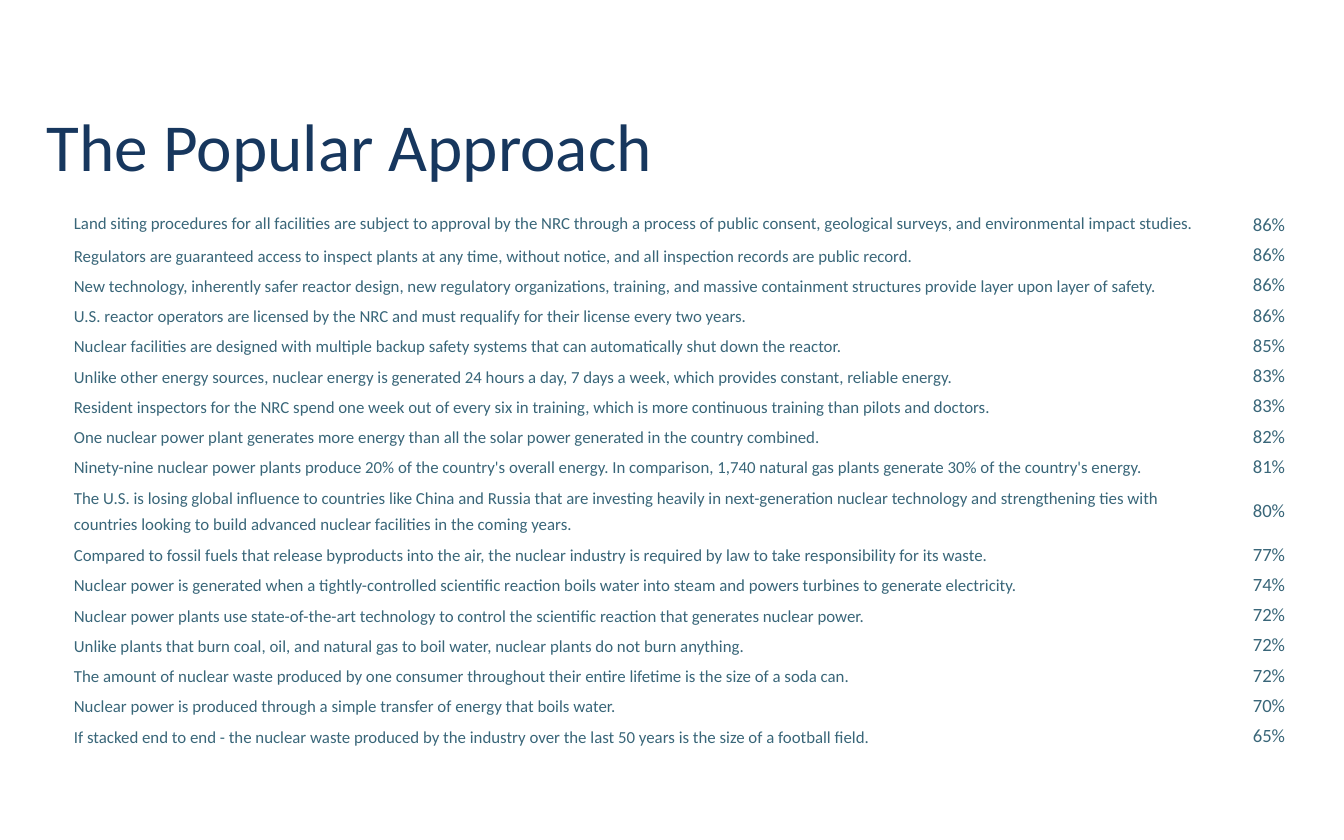
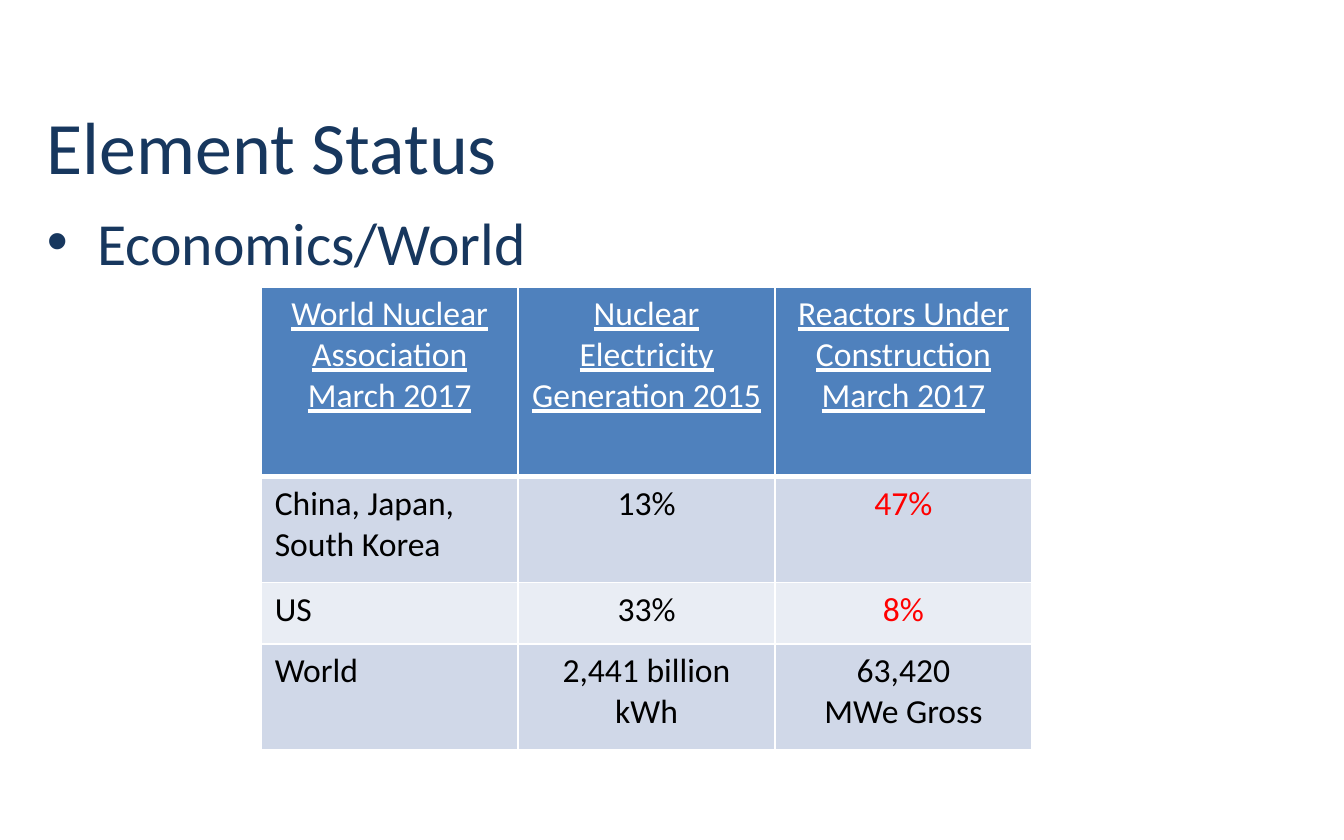
from lxml import etree
from pptx import Presentation
from pptx import util as u
from pptx.dml.color import RGBColor
from pptx.enum import text as t
from pptx.oxml import ns

Pt = u.Pt
FONT = "Calibri"
NAVY = RGBColor(0x17, 0x37, 0x5E)
TEAL = RGBColor(0x39, 0x66, 0x79)
BLUE = RGBColor(0x4F, 0x81, 0xBD)
PALE = RGBColor(0xD0, 0xD8, 0xE8)
MIST = RGBColor(0xE9, 0xED, 0xF4)
WHITE = RGBColor(0xFF, 0xFF, 0xFF)
BLACK = RGBColor(0, 0, 0)
RED = RGBColor(0xFF, 0, 0)
LEFT, MID = t.PP_ALIGN.LEFT, t.PP_ALIGN.CENTER

CLAIMS = [
    ("Land siting procedures for all facilities are subject to approval by the NRC through a process of "
     "public consent, geological surveys, and environmental impact studies.", 86),
    ("Regulators are guaranteed access to inspect plants at any time, without notice, and all inspection "
     "records are public record.", 86),
    ("New technology, inherently safer reactor design, new regulatory organizations, training, and massive "
     "containment structures provide layer upon layer of safety.", 86),
    ("U.S. reactor operators are licensed by the NRC and must requalify for their license every two years.", 86),
    ("Nuclear facilities are designed with multiple backup safety systems that can automatically shut down "
     "the reactor.", 85),
    ("Unlike other energy sources, nuclear energy is generated 24 hours a day, 7 days a week, which provides "
     "constant, reliable energy.", 83),
    ("Resident inspectors for the NRC spend one week out of every six in training, which is more continuous "
     "training than pilots and doctors.", 83),
    ("One nuclear power plant generates more energy than all the solar power generated in the country "
     "combined.", 82),
    ("Ninety-nine nuclear power plants produce 20% of the country's overall energy. In comparison, 1,740 "
     "natural gas plants generate 30% of the country's energy.", 81),
    ("The U.S. is losing global influence to countries like China and Russia that are investing heavily in "
     "next-generation nuclear technology and strengthening ties with countries looking to build advanced "
     "nuclear facilities in the coming years.", 80),
    ("Compared to fossil fuels that release byproducts into the air, the nuclear industry is required by law "
     "to take responsibility for its waste.", 77),
    ("Nuclear power is generated when a tightly-controlled scientific reaction boils water into steam and "
     "powers turbines to generate electricity.", 74),
    ("Nuclear power plants use state-of-the-art technology to control the scientific reaction that generates "
     "nuclear power.", 72),
    ("Unlike plants that burn coal, oil, and natural gas to boil water, nuclear plants do not burn "
     "anything.", 72),
    ("The amount of nuclear waste produced by one consumer throughout their entire lifetime is the size of a "
     "soda can.", 72),
    ("Nuclear power is produced through a simple transfer of energy that boils water.", 70),
    ("If stacked end to end - the nuclear waste produced by the industry over the last 50 years is the size "
     "of a football field.", 65),
]
LONG = 9

STATUS = [
    [["World Nuclear Association", "March 2017"], ["Nuclear Electricity Generation 2015"],
     ["Reactors Under Construction", "March 2017"]],
    [["China, Japan, South Korea"], ["13%"], ["47%"]],
    [["US"], ["33%"], ["8%"]],
    [["World"], ["2,441 billion kWh"], ["63,420", "MWe Gross"]],
]


def write(frame, lines, size, color, align=LEFT, line=False):
    """Put each line in its own paragraph and return the paragraphs."""
    for i, words in enumerate(lines):
        para = frame.add_paragraph() if i else frame.paragraphs[0]
        para.alignment = align
        run = para.add_run()
        run.text = words
        font = run.font
        font.name, font.size, font.underline = FONT, Pt(size), line
        font.color.rgb = color
    return frame.paragraphs


def box(slide, top, high, words, size, anchor):
    """Add a full-width navy text box and return its paragraph."""
    frame = slide.shapes.add_textbox(Pt(18), Pt(top), Pt(684), Pt(high)).text_frame
    frame.word_wrap = True
    frame.vertical_anchor = anchor
    return write(frame, [words], size, NAVY)[0]


def title(slide, words, size):
    """Add the slide title."""
    box(slide, 48, 59, words, size, t.MSO_ANCHOR.MIDDLE)


def bullet(slide, words):
    """Add the bulleted heading under the title."""
    para = box(slide, 106.5, 299.5, words, 32, t.MSO_ANCHOR.TOP)
    props = para._p.get_or_add_pPr()
    props.set("marL", str(Pt(27)))
    props.set("indent", str(-Pt(27)))
    etree.SubElement(props, ns.qn("a:buFont"), typeface="Arial")
    etree.SubElement(props, ns.qn("a:buChar"), char="•")


def grid(slide, left, top, cols, rows):
    """Add a table without style flags, sized by its columns and rows."""
    table = slide.shapes.add_table(
        len(rows), len(cols), Pt(left), Pt(top), Pt(sum(cols)), Pt(sum(rows))).table
    table.first_row = table.horz_banding = False
    for col, wide in zip(table.columns, cols):
        col.width = Pt(wide)
    for row, high in zip(table.rows, rows):
        row.height = Pt(high)
    return table


def edge(cell, base):
    """Draw white borders round a cell, with the given width at the base."""
    props = cell._tc.get_or_add_tcPr()
    for side, wide in zip("LRTB", (1, 1, 1, base)):
        line = etree.SubElement(props, ns.qn("a:ln" + side), w=str(Pt(wide)))
        fill = etree.SubElement(line, ns.qn("a:solidFill"))
        etree.SubElement(fill, ns.qn("a:srgbClr"), val=str(WHITE))


def claim(cell, words, size, align, gap, anchor):
    """Fill one tight, clear cell of the claims table."""
    cell.fill.background()
    cell.margin_left = cell.margin_right = Pt(3.6)
    cell.margin_top = cell.margin_bottom = 0
    cell.vertical_anchor = anchor
    para = write(cell.text_frame, [words], size, TEAL, align)[0]
    para.line_spacing = Pt(14)
    if gap:
        para.space_after = Pt(gap)


def claims(slide):
    """Add the table of claims and their scores."""
    rows = [31 if i == LONG else 16.2 for i in range(len(CLAIMS))]
    table = grid(slide, 36, 111.6, [621, 45.6], rows)
    for i, (words, score) in enumerate(CLAIMS):
        anchor = t.MSO_ANCHOR.MIDDLE if i else t.MSO_ANCHOR.TOP
        claim(table.cell(i, 0), words, 9, LEFT, 6, anchor)
        claim(table.cell(i, 1), f"{score}%", 10, MID, 0, t.MSO_ANCHOR.MIDDLE)


def status(slide):
    """Add the table of world generation and construction."""
    table = grid(slide, 140, 153.6, [137.6] * 3, [101.6, 56.8, 33, 56.8])
    for i, row in enumerate(STATUS):
        for j, lines in enumerate(row):
            cell = table.cell(i, j)
            head = i == 0
            edge(cell, 3 if head else 1)
            cell.fill.solid()
            cell.fill.fore_color.rgb = BLUE if head else PALE if i % 2 else MIST
            color = WHITE if head else RED if j == 2 and i < 3 else BLACK
            write(cell.text_frame, lines, 18, color, MID if head or j else LEFT, head)


def main():
    """Build both slides and save them."""
    deck = Presentation()
    deck.slide_width, deck.slide_height = Pt(720), Pt(450)
    blank = deck.slide_layouts[6]

    slide = deck.slides.add_slide(blank)
    title(slide, "The Popular Approach", 36)
    claims(slide)

    slide = deck.slides.add_slide(blank)
    title(slide, "Element Status", 39.6)
    bullet(slide, "Economics/World")
    status(slide)

    deck.save("out.pptx")


if __name__ == "__main__":
    main()
